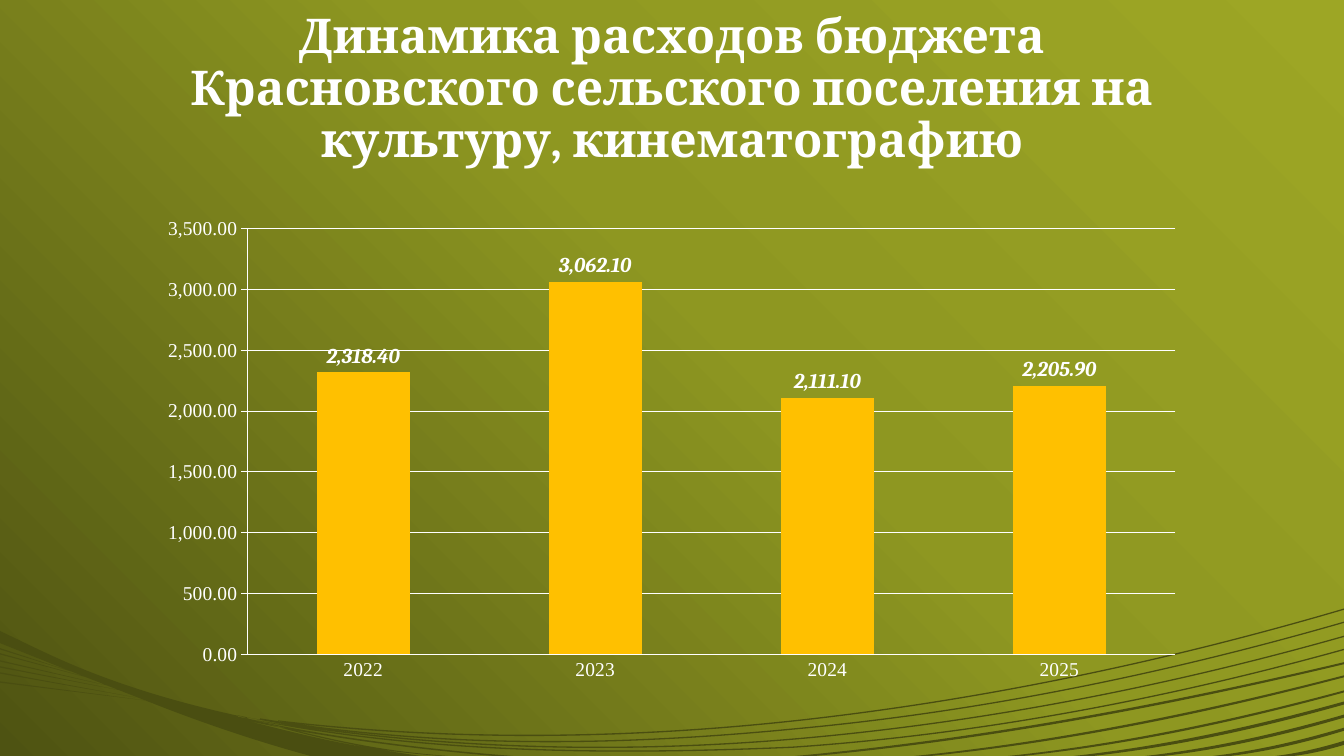
from copy import deepcopy

from lxml.etree import SubElement
from pptx import Presentation
from pptx.chart.data import CategoryChartData
from pptx.dml.color import RGBColor
from pptx.enum.chart import XL_CHART_TYPE, XL_LABEL_POSITION, XL_TICK_MARK
from pptx.enum.text import MSO_ANCHOR, PP_ALIGN
from pptx.oxml.ns import qn
from pptx.util import Inches, Pt

COLORS = {
    "light": "9DA625",
    "olive": "8E9721",
    "dark": "4E5312",
    "wave": "4A4E11",
    "bar": "FFC000",
    "text": "FFFFFF",
}
RGB = {name: RGBColor.from_string(value) for name, value in COLORS.items()}
WIDTH, HEIGHT = 13.33, 7.5
LEFT, CONTENT_WIDTH = WIDTH / 8, WIDTH * 3 / 4


def style_font(font, face, size, bold=False, italic=False):
    font.name, font.size = face, Pt(size)
    font.bold, font.italic = bold, italic
    font.color.rgb = RGB["text"]


presentation = Presentation()
presentation.slide_width = Inches(WIDTH)
presentation.slide_height = Inches(HEIGHT)
slide = presentation.slides.add_slide(presentation.slide_layouts[6])

# Background gradient
backdrop = slide.background.fill
backdrop.gradient()
backdrop.gradient_angle = 225
first_stop = backdrop.gradient_stops[0]._gs
first_stop.addnext(deepcopy(first_stop))
gradient = zip(backdrop.gradient_stops, ("light", "olive", "dark"), (0, 0.45, 1))
for stop, name, position in gradient:
    stop.color.rgb = RGB[name]
    stop.position = position

# Waves: every outline is a list of segments, one point for a line
# and three points for a Bezier curve
outlines = [[
    [(0, 6.26)],
    [(0.19, 6.35), (0.37, 6.44), (0.57, 6.53)],
    [(1.17, 6.8), (1.8, 6.98), (2.4, 7.11)],
    [(2.99, 7.29), (3.58, 7.42), (4.18, HEIGHT)],
    [(3.08, HEIGHT)],
    [(2.53, 7.35), (2, 7.17), (1.47, 6.96)],
    [(0.55, 6.6)],
    [(0, 6.38)],
]]

# Height at the right edge and in the middle, then the two last controls and end
long_strands = [
    (6.05, 6.6, 6.97, 7.16, [(6.09, 7.35), (4.37, 7.35), (2.76, 7.16)]),
    (6.18, 6.72, 7.08, 7.24, [(6, 7.42), (4.3, 7.42), (2.58, 7.14)]),
    (6.32, 6.85, 7.19, 7.34, [(5.96, 7.5), (4.14, 7.42), (2.45, 7.13)]),
    (6.45, 6.97, 7.3, 7.42, [(6, 7.5), (4.1, 7.48), (2.36, 7.11)]),
]
for right_y, control_1, control_2, middle_y, tail in long_strands:
    edge = [(WIDTH, right_y), (11.46, control_1), (9.62, control_2),
            (7.86, middle_y), *tail]
    back = [(x, y - 0.013) for x, y in reversed(edge)]
    outlines.append([edge[:1], edge[1:4], edge[4:], back[:1], back[1:4], back[4:]])

# Upper and lower height at the right edge, then both ends on the bottom edge
right_strands = [
    (6.57, 6.59, 7.89, 8.08), (6.7, 6.72, 9.07, 9.23), (6.85, 6.87, 10, 10.15),
    (6.96, 6.99, 10.65, 10.84), (7.09, 7.12, 11.36, 11.54),
    (7.22, 7.25, 12.03, 12.2), (7.35, 7.39, 12.65, 12.83),
]
for upper_y, lower_y, *bottom_ends in right_strands:
    upper, lower = [
        [(x + (WIDTH - x) * share, HEIGHT - (HEIGHT - y) * rise)
         for share, rise in ((0, 0), (1 / 3, 0.18), (2 / 3, 0.54), (1, 1))]
        for x, y in zip(bottom_ends, (upper_y, lower_y))
    ]
    outlines.append([upper[:1], upper[1:], lower[:-4:-1][:1], lower[2::-1]])

for bottom_x, thickness in ((5.09, 0.19), (4.44, 0.06)):
    outlines.append([
        [(2.36, 7.11)],
        [(3.2, 7.31), (bottom_x - 0.8, 7.44), (bottom_x, HEIGHT)],
        [(bottom_x - thickness, HEIGHT)],
        [(bottom_x - 0.9, 7.44), (3.1, 7.31), (2.28, 7.11)],
    ])

left_strands = [(6.43, 0.7, 6.66), (6.48, 0.9, 6.73), (6.55, 1.06, 6.8),
                (6.61, 1.2, 6.85), (6.67, 1.35, 6.92), (6.76, 1.45, 6.95)]
for left_y, end_x, end_y in left_strands:
    outlines.append([[(0, left_y)], [(end_x, end_y)], [(0, left_y + 0.013)]])

builder = None
for outline in outlines:
    points = [(Inches(x), Inches(y)) for segment in outline for x, y in segment]
    if builder is None:
        builder = slide.shapes.build_freeform(*points[0])
    else:
        builder.move_to(*points[0])
    builder.add_line_segments(points[1:], close=True)
waves = builder.convert_to_shape()
waves.shadow.inherit = False
waves.fill.solid()
waves.fill.fore_color.rgb = RGB["wave"]
waves.line.fill.background()

# Join the three points of each curved segment into one Bezier curve
steps = iter(list(waves._element.iter(qn("a:lnTo"))))
for segment in (segment for outline in outlines for segment in outline[1:]):
    parts = [next(steps) for _ in segment]
    if len(parts) == 3:
        parts[0].addprevious(bezier := SubElement(parts[0].getparent(),
                                                  qn("a:cubicBezTo")))
        for part in parts:
            bezier.append(part[0])
            part.getparent().remove(part)

# Title
title = slide.shapes.add_textbox(
    Inches(LEFT), Inches(0.44), Inches(CONTENT_WIDTH), Inches(1.27)).text_frame
title.word_wrap = True
title.vertical_anchor = MSO_ANCHOR.BOTTOM
title.text = ("Динамика расходов бюджета Красновского сельского поселения "
              "на культуру, кинематографию")
heading = title.paragraphs[0]
heading.alignment = PP_ALIGN.CENTER
heading.line_spacing = 0.9
style_font(heading.runs[0].font, "Cambria", 34.2, bold=True)

# Spending by year
spending = CategoryChartData(number_format="#,##0.00")
spending.categories = ["2022", "2023", "2024", "2025"]
spending.add_series("", (2318.4, 3062.1, 2111.1, 2205.9))
chart = slide.shapes.add_chart(
    XL_CHART_TYPE.COLUMN_CLUSTERED, Inches(LEFT), Inches(1.71),
    Inches(CONTENT_WIDTH), Inches(5.43), spending).chart
chart.has_title = False
chart.has_legend = False
style_font(chart.font, "Cambria", 11.8)

plot = chart.plots[0]
plot.gap_width = 150
plot.vary_by_categories = False
bars = plot.series[0]
bars.format.fill.solid()
bars.format.fill.fore_color.rgb = RGB["bar"]
labels = bars.data_labels
labels.show_value = True
labels.position = XL_LABEL_POSITION.OUTSIDE_END
labels.number_format, labels.number_format_is_linked = "#,##0.00", False
style_font(labels.font, "Cambria", 15, bold=True, italic=True)

years, amounts = chart.category_axis, chart.value_axis
for axis, tick in ((years, XL_TICK_MARK.NONE), (amounts, XL_TICK_MARK.OUTSIDE)):
    axis.major_tick_mark = tick
    axis.minor_tick_mark = XL_TICK_MARK.NONE
    style_font(axis.tick_labels.font, "Times New Roman", 14)
amounts.minimum_scale, amounts.maximum_scale, amounts.major_unit = 0, 3500, 500
amounts.tick_labels.number_format = "#,##0.00"
amounts.tick_labels.number_format_is_linked = False
for ruled in (years, amounts, amounts.major_gridlines):
    ruled.format.line.color.rgb = RGB["text"]
    ruled.format.line.width = Pt(0.75)

plot_area = chart._chartSpace.chart.plotArea
for old_layout in plot_area.findall(qn("c:layout")):
    plot_area.remove(old_layout)
layout = SubElement(plot_area, qn("c:layout"))
plot_area.insert(0, layout)
manual = SubElement(layout, qn("c:manualLayout"))
placement = {"layoutTarget": "inner", "xMode": "edge", "yMode": "edge",
             "x": 0.072, "y": 0.103, "w": 0.928, "h": 0.778}
for tag, value in placement.items():
    SubElement(manual, qn(f"c:{tag}")).set("val", str(value))

presentation.save("out.pptx")
